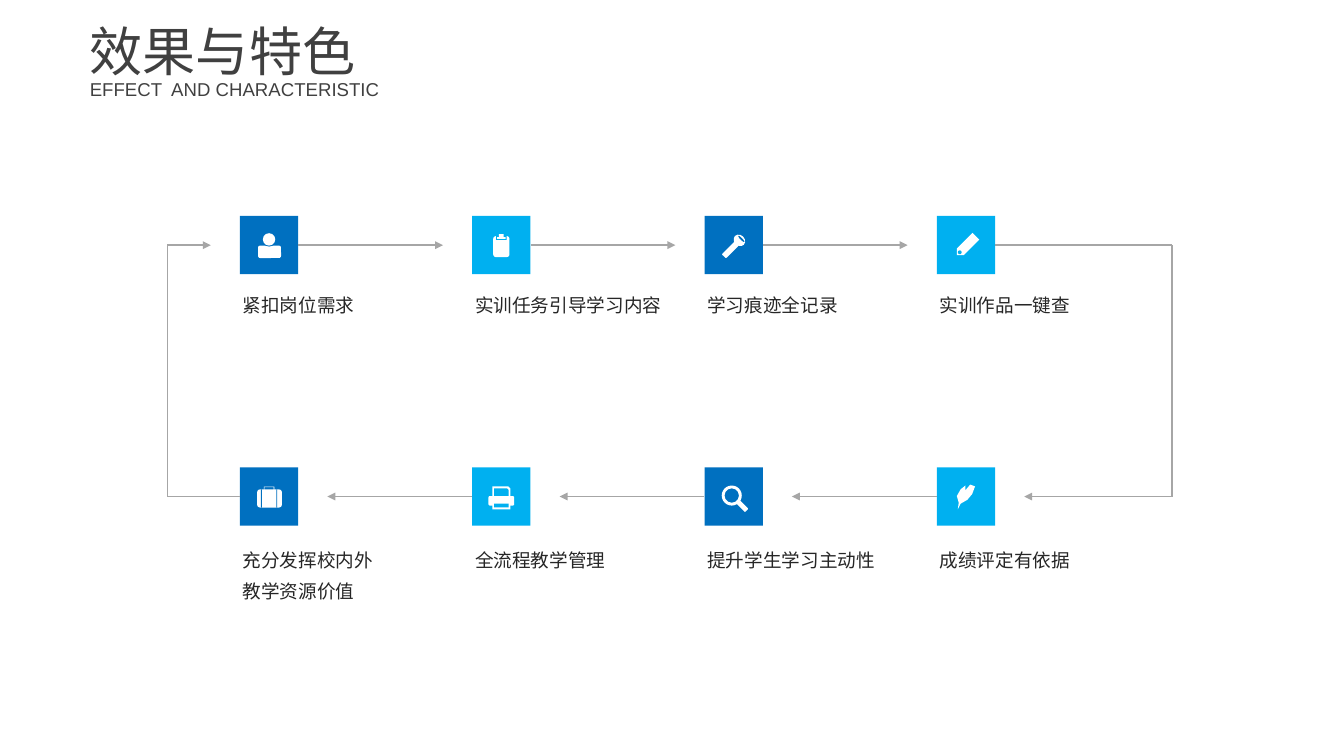
import lxml.etree
import pptx
import pptx.dml.color
import pptx.enum.shapes
import pptx.enum.text
import pptx.oxml.ns
import pptx.util

SLIDE_W, SLIDE_H = 14.06, 7.91
FONT = "Arial"
COLORS = {"dark": "0070C0", "light": "00B0F0", "icon": "FFFFFF",
          "flow": "A6A6A6", "title": "404040", "label": "262626"}
PRESET = pptx.enum.shapes.MSO_SHAPE

# Grid of the loop, in inches: two rows of four tiles
COLUMN, ROW, TILE = 2.43, 2.63, 0.61
FIRST_TILE = 0.76      # from the left side of the loop to the first tile
ARROW_GAP = TILE / 2   # between an arrowhead and the next tile
UNIT = 0.01            # icon unit

# Icon parts: preset, left, top, width, height, rotation, cut out of the icon
ICONS = {
    "person": [(PRESET.ROUNDED_RECTANGLE, 19, 31, 24, 13, 0, False),
               (PRESET.OVAL, 23, 17, 15, 15, 0, True),
               (PRESET.OVAL, 24, 18, 13, 13, 0, False)],
    "clipboard": [(PRESET.ROUNDED_RECTANGLE, 22, 21, 17, 22, 0, False),
                  (PRESET.RECTANGLE, 25, 21, 11, 4, 0, True),
                  (PRESET.RECTANGLE, 26, 22, 9, 2, 0, False),
                  (PRESET.RECTANGLE, 28, 19, 5, 4, 0, False)],
    "flashlight": [(PRESET.ROUNDED_RECTANGLE, 24, 26, 6, 19, 45, False),
                   (PRESET.OVAL, 30, 20, 13, 11, 45, False),
                   (PRESET.OVAL, 34, 23, 9, 2, 45, True)],
    "pencil": [(PRESET.PENTAGON, 17, 26, 28, 10, 135, False),
               (PRESET.OVAL, 22, 36, 4, 4, 0, True)],
    "suitcase": [(PRESET.ROUNDED_RECTANGLE, 18, 23, 26, 19, 0, False),
                 (PRESET.RECTANGLE, 22, 23, 1, 19, 0, True),
                 (PRESET.RECTANGLE, 38, 23, 1, 19, 0, True),
                 (PRESET.FRAME, 25, 20, 11, 5, 0, False)],
    "printer": [(PRESET.SNIP_1_RECTANGLE, 21, 20, 19, 14, 0, False),
                (PRESET.SNIP_1_RECTANGLE, 23, 22, 15, 10, 0, True),
                (PRESET.ROUNDED_RECTANGLE, 17, 30, 27, 10, 0, False),
                (PRESET.RECTANGLE, 21, 36, 19, 8, 0, False),
                (PRESET.RECTANGLE, 23, 38, 15, 4, 0, True)],
    "magnifier": [(PRESET.DONUT, 18, 19, 21, 21, 0, False),
                  (PRESET.ROUNDED_RECTANGLE, 33, 38, 13, 5, 45, False)],
}
FEATHER = [(22, 44), (25, 38), (32, 34), (37, 28), (40, 20), (35, 18),
           (30, 24), (30, 19), (25, 23), (21, 30), (23, 37)]

STEPS = [
    [("person", ["紧扣岗位需求"]), ("clipboard", ["实训任务引导学习内容"]),
     ("flashlight", ["学习痕迹全记录"]), ("pencil", ["实训作品一键查"])],
    [("suitcase", ["充分发挥校内外", "教学资源价值"]), ("printer", ["全流程教学管理"]),
     ("magnifier", ["提升学生学习主动性"]), ("feather", ["成绩评定有依据"])],
]


def rgb(name):
    return pptx.dml.color.RGBColor.from_string(COLORS[name])


def paint(shape, color):
    shape.shadow.inherit = False
    shape.fill.solid()
    shape.fill.fore_color.rgb = rgb(color)
    shape.line.fill.background()


def write(holder, box, lines, size, color, anchor, spacing=1.0, before=0):
    """Place a text holder in its box and fill it."""
    holder.left, holder.top, holder.width, holder.height = map(pptx.util.Inches, box)
    frame = holder.text_frame
    frame.word_wrap = True
    frame.auto_size = pptx.enum.text.MSO_AUTO_SIZE.NONE
    frame.vertical_anchor = anchor
    frame.margin_left = frame.margin_right = frame.margin_top = frame.margin_bottom = 0
    for number, line in enumerate(lines):
        paragraph = frame.add_paragraph() if number else frame.paragraphs[0]
        paragraph.alignment = pptx.enum.text.PP_ALIGN.LEFT
        paragraph.line_spacing = spacing
        paragraph.space_before = pptx.util.Pt(before)
        run = paragraph.add_run()
        run.text = line
        run.font.name = FONT
        run.font.size = pptx.util.Pt(size)
        run.font.color.rgb = rgb(color)


def add_heading(slide, left, top):
    middle = pptx.enum.text.MSO_ANCHOR.MIDDLE
    write(slide.shapes.title, (left, top, 4.32, 0.67), ["效果与特色"], 40, "title", middle)
    subtitle = slide.shapes.add_textbox(0, 0, 0, 0)
    write(subtitle, (left, top + 0.62, 3.07, 0.24), ["EFFECT  AND CHARACTERISTIC"],
          14, "title", middle)


def add_tile(slide, left, top, icon, color):
    """Add a coloured square with its icon and return the square."""
    x, y, side = map(pptx.util.Inches, (left, top, TILE))
    shapes = slide.shapes.add_group_shape().shapes
    tile = shapes.add_shape(PRESET.RECTANGLE, x, y, side, side)
    paint(tile, color)
    if icon == "feather":
        feather = shapes.build_freeform(*FEATHER[0], scale=pptx.util.Inches(UNIT))
        feather.add_line_segments(FEATHER[1:], close=True)
        paint(feather.convert_to_shape(x, y), "icon")
        return tile
    for preset, dx, dy, width, height, rotation, cut in ICONS[icon]:
        part = shapes.add_shape(preset, *map(pptx.util.Inches, (
            left + dx * UNIT, top + dy * UNIT, width * UNIT, height * UNIT)))
        part.rotation = rotation
        if preset == PRESET.DONUT:
            part.adjustments[0] = 0.14
        paint(part, color if cut else "icon")
    return tile


def add_flow(slide, start, end, arrow=True, source=None, side=0):
    """Draw a line, joined at its start to a side of the source."""
    line = slide.shapes.add_connector(pptx.enum.shapes.MSO_CONNECTOR.STRAIGHT,
                                      *map(pptx.util.Inches, (*start, *end)))
    line.line.color.rgb = rgb("flow")
    line.line.width = pptx.util.Pt(1)
    properties = line._element.spPr
    if arrow:
        lxml.etree.SubElement(properties.get_or_add_ln(), pptx.oxml.ns.qn("a:tailEnd"),
                              type="triangle")
    lxml.etree.SubElement(properties, pptx.oxml.ns.qn("a:effectLst"))
    if source is not None:
        line.begin_connect(source, side)


def add_loop(slide, left, top, width):
    right, lefts = left + width, [left + FIRST_TILE + COLUMN * i for i in range(4)]
    upper, lower = top + TILE / 2, top + ROW + TILE / 2
    tiles = []

    # Tiles and their labels
    for row, steps in enumerate(STEPS):
        y = top + ROW * row
        label_top = y + (0.81 if row else 0.77)
        tiles.append([])
        for column, (icon, lines) in enumerate(steps):
            color = "light" if column % 2 else "dark"
            tiles[row].append(add_tile(slide, lefts[column], y, icon, color))
            write(slide.shapes.add_textbox(0, 0, 0, 0),
                  (lefts[column] + 0.03, label_top, 2.4, 0.26 + 0.35 * (len(lines) - 1)),
                  lines, 14, "label", pptx.enum.text.MSO_ANCHOR.TOP, 1.2, 2.8)

    # Arrows along the rows: rightwards above, leftwards below
    for i in range(3):
        add_flow(slide, (lefts[i] + TILE, upper), (lefts[i + 1] - ARROW_GAP, upper),
                 source=tiles[0][i], side=3)
        add_flow(slide, (lefts[i + 1], lower), (lefts[i] + TILE + ARROW_GAP, lower),
                 source=tiles[1][i + 1], side=1)

    # Turns at both ends
    add_flow(slide, (lefts[3] + TILE, upper), (right, upper), False, tiles[0][3], 3)
    add_flow(slide, (right, upper), (right, lower), False)
    add_flow(slide, (right, lower), (lefts[3] + TILE + ARROW_GAP, lower))
    add_flow(slide, (lefts[0], lower), (left, lower), False, tiles[1][0], 1)
    add_flow(slide, (left, lower), (left, upper), False)
    add_flow(slide, (left, upper), (lefts[0] - ARROW_GAP, upper))


def main():
    deck = pptx.Presentation()
    deck.slide_width, deck.slide_height = map(pptx.util.Inches, (SLIDE_W, SLIDE_H))
    slide = deck.slides.add_slide(deck.slide_layouts[5])
    add_heading(slide, 0.94, 0.19)
    add_loop(slide, 1.75, 2.26, 10.51)
    deck.save("out.pptx")


if __name__ == "__main__":
    main()
